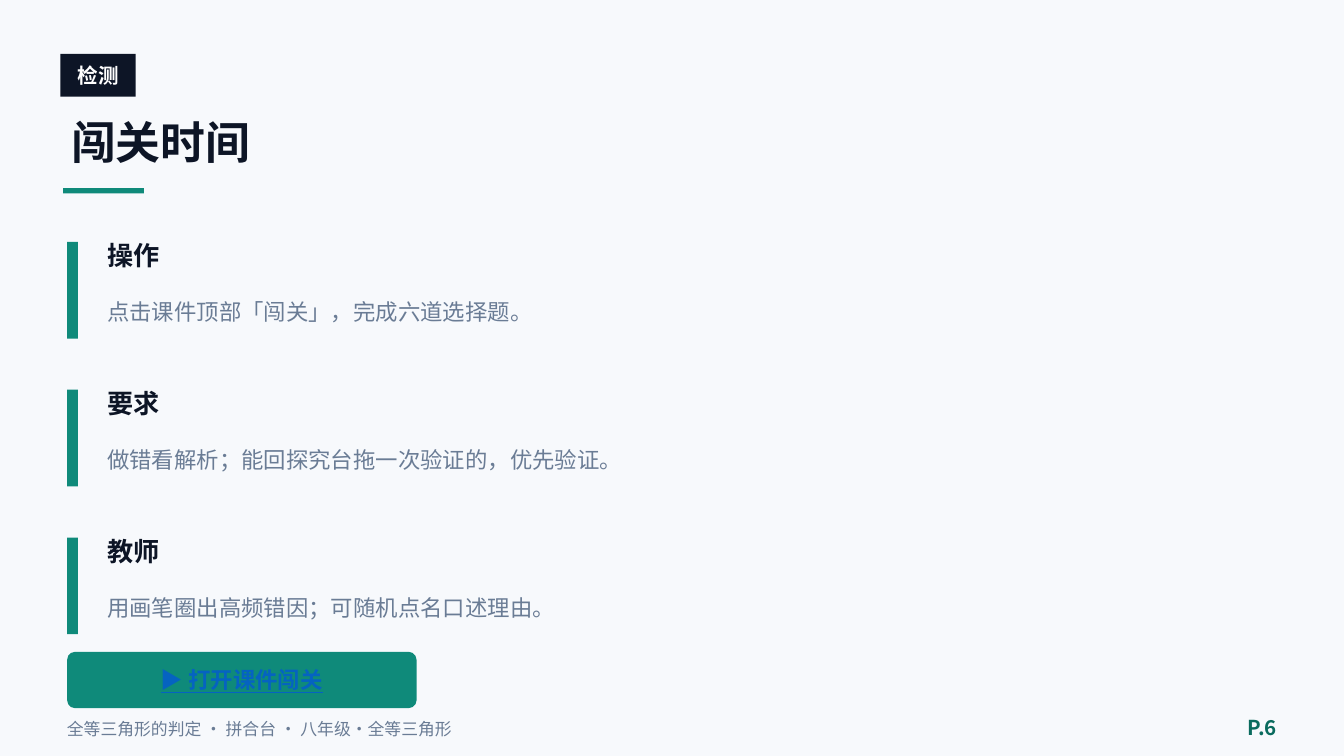
from lxml.etree import SubElement
from pptx import Presentation
from pptx.dml.color import RGBColor
from pptx.enum.shapes import MSO_SHAPE
from pptx.enum.text import MSO_ANCHOR, PP_ALIGN
from pptx.oxml.ns import qn
from pptx.util import Pt

FONT = "Noto Sans CJK SC"
COLORS = {
    "page": "F7F9FC",
    "ink": "0D1526",
    "teal": "0F8A7A",
    "deep": "0A6B5E",
    "gray": "6A7C95",
    "blue": "0563C1",
    "white": "FFFFFF",
}
STEPS = [
    ("操作", "点击课件顶部「闯关」，完成六道选择题。"),
    ("要求", "做错看解析；能回探究台拖一次验证的，优先验证。"),
    ("教师", "用画笔圈出高频错因；可随机点名口述理由。"),
]


def color(name):
    return RGBColor.from_string(COLORS[name])


def add_text(slide, words, box, size=12, fill="gray", bold=False,
             line=False, align=PP_ALIGN.LEFT):
    frame = slide.shapes.add_textbox(*map(Pt, box)).text_frame
    frame.word_wrap = True
    frame.vertical_anchor = MSO_ANCHOR.MIDDLE
    para = frame.paragraphs[0]
    para.alignment = align
    run = para.add_run()
    run.text = words
    font = run.font
    font.name = FONT
    font.size = Pt(size)
    font.bold = bold
    font.underline = line
    font.color.rgb = color(fill)
    SubElement(run._r.get_or_add_rPr(), qn("a:ea")).set("typeface", FONT)


def add_block(slide, box, fill, kind=MSO_SHAPE.RECTANGLE):
    block = slide.shapes.add_shape(kind, *map(Pt, box))
    block.shadow.inherit = False
    block.fill.solid()
    block.fill.fore_color.rgb = color(fill)
    block.line.fill.background()
    return block


def add_head(slide, box, tag, title):
    left, top, width, height = box
    add_block(slide, (left + 1.4, top, 40.3, 23), "ink")
    add_text(slide, tag, (left + 1.4, top - 0.7, 40.3, 24.5), size=11,
             fill="white", bold=True, align=PP_ALIGN.CENTER)
    add_text(slide, title, (left, top + 27.4, width, 39.6), size=24,
             fill="ink", bold=True)
    add_block(slide, (left + 2.9, top + height - 2.9, 43.2, 2.9), "teal")


def add_step(slide, box, name, note):
    left, top, width, height = box
    add_block(slide, (left, top + 3.6, 5.8, height - 7.2), "teal")
    add_text(slide, name, (left + 14.4, top, width - 14.4, 21.6), size=14,
             fill="ink", bold=True)
    add_text(slide, note, (left + 14.4, top + 23, width - 14.4, height - 23))


def add_list(slide, box, steps, gap):
    left, top, width, height = box
    tall = (height - gap * (len(steps) - 1)) / len(steps)
    for index, step in enumerate(steps):
        add_step(slide, (left, top + index * (tall + gap), width, tall), *step)


def add_button(slide, box, words):
    block = add_block(slide, box, "teal", MSO_SHAPE.ROUNDED_RECTANGLE)
    block.adjustments[0] = 0.14
    add_text(slide, words, box, fill="blue", bold=True, line=True,
             align=PP_ALIGN.CENTER)


def add_foot(slide, box, words, page):
    left, top, width, height = box
    add_text(slide, words, (left, top + 1.4, 518.4, height - 1.4), size=9)
    add_text(slide, page, (left + width - 43.2, top, 43.2, height), size=11,
             fill="deep", bold=True, align=PP_ALIGN.RIGHT)


def main():
    deck = Presentation()
    deck.slide_width = Pt(720)
    deck.slide_height = Pt(405)
    slide = deck.slides.add_slide(deck.slide_layouts[6])
    back = slide.background.fill
    back.solid()
    back.fore_color.rgb = color("page")
    add_head(slide, (31, 28.8, 648, 74.9), "检测", "闯关时间")
    add_list(slide, (36, 126, 648, 217.4), STEPS, gap=20.2)
    add_button(slide, (36, 349.2, 187.2, 30.2), "▶ 打开课件闯关")
    add_foot(slide, (28.8, 378.7, 662.4, 21.6),
             "全等三角形的判定 · 拼合台 · 八年级·全等三角形", "P.6")
    deck.save("out.pptx")


if __name__ == "__main__":
    main()
